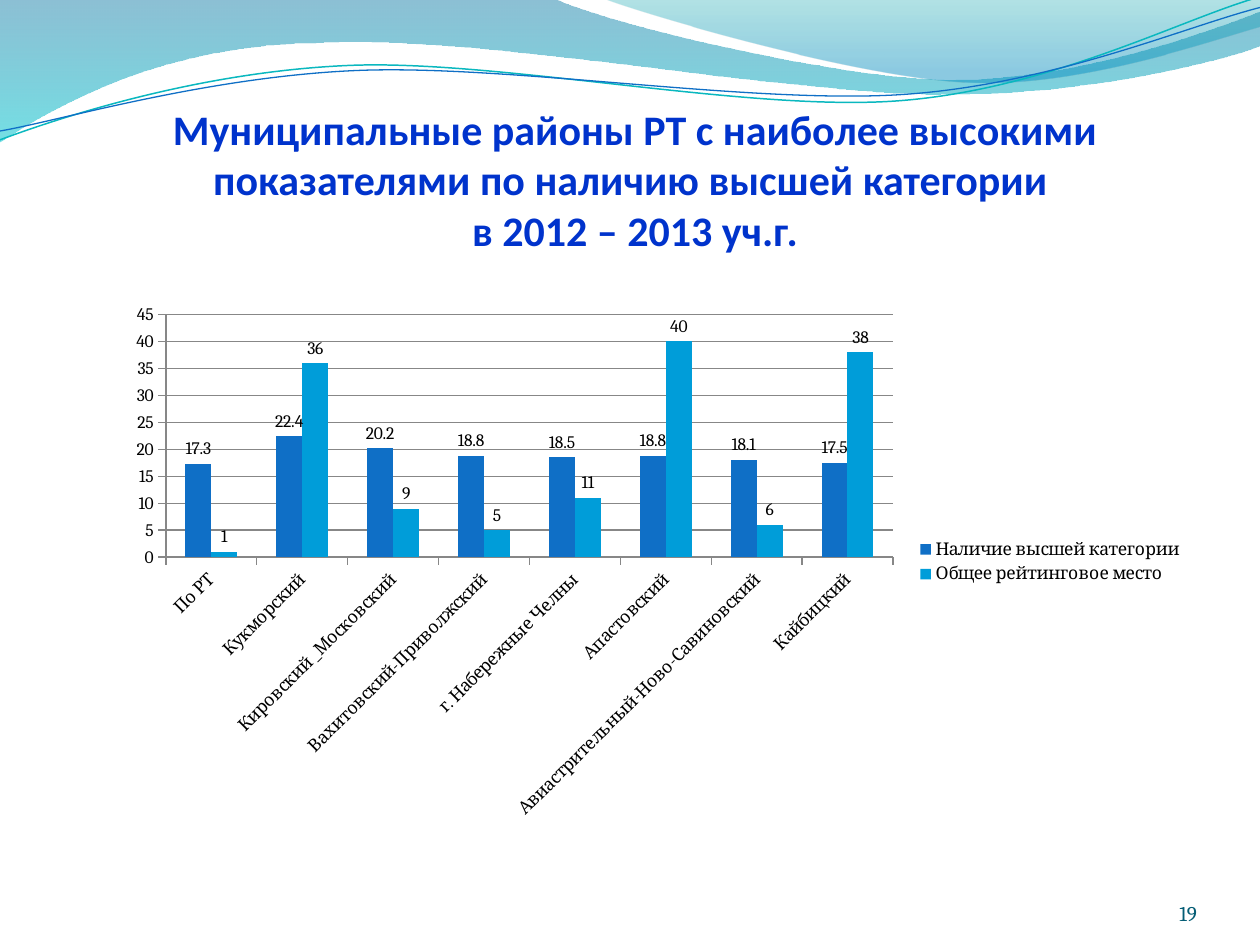
from math import cos, radians, sin
from pptx import Presentation
from pptx.chart.data import CategoryChartData
from pptx.dml.color import RGBColor
from pptx.enum.chart import XL_CHART_TYPE, XL_LABEL_POSITION, XL_LEGEND_POSITION, XL_TICK_MARK
from pptx.enum.text import MSO_ANCHOR, PP_ALIGN
from pptx.oxml.ns import qn
from pptx.util import Pt
from lxml.etree import SubElement

TITLE_BLUE = RGBColor(0x00, 0x33, 0xCC)
NUMBER_TEAL = RGBColor(0x04, 0x5D, 0x75)
BLUE = RGBColor(0x0F, 0x6F, 0xC6)
SKY = RGBColor(0x00, 0x9D, 0xD9)
AQUA = RGBColor(0x0A, 0xB8, 0xBF)
DEEP_BLUE = RGBColor(0x00, 0x74, 0xA1)
TURQUOISE = RGBColor(0x00, 0xC6, 0xCF)
SEA = RGBColor(0x00, 0xA1, 0xA9)
AZURE = RGBColor(0x00, 0x8B, 0xBF)
BLACK = RGBColor(0x00, 0x00, 0x00)
TILT = 2.7

prs = Presentation()
prs.slide_width, prs.slide_height = Pt(720), Pt(540)
slide = prs.slides.add_slide(prs.slide_layouts[6])


def add_wave(start, segments, closed):
    outline = [(Pt(x), Pt(y)) for x, y in [start, *(p for segment in segments for p in segment)]]
    builder = slide.shapes.build_freeform(*outline[0])
    builder.add_line_segments(outline[1:], close=closed)
    wave = builder.convert_to_shape()
    wave.shadow.inherit = False
    lines = wave._element.spPr.iter(qn("a:lnTo"))
    for segment, steps in [(s, [next(lines_list) for _ in s]) for lines_list in [iter(list(lines))] for s in segments]:
        if len(segment) == 3:
            curve = SubElement(steps[0].getparent(), qn("a:cubicBezTo"))
            steps[0].addprevious(curve)
            for step in steps:
                curve.append(step[0])
                step.getparent().remove(step)
    return wave


def add_text(left, top, width, height, inset_top, align, lines, font_name, size, color, bold):
    frame = slide.shapes.add_textbox(Pt(left), Pt(top), Pt(width), Pt(height)).text_frame
    frame.word_wrap = True
    frame.vertical_anchor = MSO_ANCHOR.BOTTOM
    frame.margin_left = frame.margin_right = frame.margin_bottom = 0
    frame.margin_top = Pt(inset_top)
    paragraph = frame.paragraphs[0]
    paragraph.alignment = align
    for index, line in enumerate(lines):
        if index:
            paragraph.add_line_break()
        run = paragraph.add_run()
        run.text = line
        run.font.name = font_name
        run.font.size = Pt(size)
        run.font.bold = bold
        run.font.color.rgb = color


bands = [
    ((0, -0.7), [
        [(316.8, -0.7)],
        [(342.7, 12.2), (478.1, 45.4), (545.8, 45.4)],
        [(614.2, 45.4), (689.8, 18.7), (720, 6.5)],
        [(720.7, 25.9)],
        [(707.8, 31.7), (626.4, 54.7), (537.1, 54)],
        [(447.8, 54), (275, 20.2), (185, 24.5)],
        [(92.9, 25.2), (33.1, 59.8), (-0.7, 81.4)],
        [(0, -0.7)],
    ], [(0, DEEP_BLUE, 45), (1, TURQUOISE, 55)]),
    ((344.9, -0.7), [
        [(366.5, 7.9), (491, 44.6), (553.7, 46.8)],
        [(616.3, 49.7), (691.9, 23), (720, 15.1)],
        [(720, 0)],
        [(344.9, -0.7)],
    ], [(0, SEA, 30), (0.8, AZURE, 45)]),
]
for start, segments, stops in bands:
    band = add_wave(start, segments, True)
    band.line.fill.background()
    band.fill.gradient()
    band.fill.gradient_angle = 270
    for stop, (position, color, opacity) in zip(band.fill.gradient_stops, stops):
        stop.position = position
        stop.color.rgb = color
    for color_node, (_, _, opacity) in zip(band._element.spPr.iter(qn("a:srgbClr")), stops):
        SubElement(color_node, qn("a:alpha")).set("val", str(opacity * 1000))

strands = [
    ((359.3, 41.4), (0, 79.9), [
        [(34.6, 67), (113.8, 41), (199.4, 37.4)],
        [(284.4, 33.8), (427, 64.1), (513.4, 57.6)],
        [(599.8, 51.1), (675.4, 10.8), (718.6, -1.4)],
    ], AQUA, 0.85),
    ((359.6, 42.5), (0, 74.9), [
        [(33.8, 69.1), (118.1, 43.9), (203.8, 40.3)],
        [(290.2, 36.7), (429.8, 59.8), (516.2, 54)],
        [(601.9, 48.2), (677.5, 15.1), (720, 4.3)],
    ], BLUE, 0.75),
]
turn_cos, turn_sin = cos(radians(TILT)), sin(radians(TILT))
for (mid_x, mid_y), start, segments, color, width in strands:
    level = [
        [(mid_x + (x - mid_x) * turn_cos - (y - mid_y) * turn_sin,
          mid_y + (x - mid_x) * turn_sin + (y - mid_y) * turn_cos) for x, y in segment]
        for segment in [[start], *segments]
    ]
    strand = add_wave(level[0][0], level[1:], False)
    strand.rotation = 360 - TILT
    strand.fill.background()
    strand.line.color.rgb = color
    strand.line.width = Pt(width)

title_lines = [
    "Муниципальные районы РТ с наиболее высокими показателями по наличию высшей категории ",
    "в 2012 – 2013 уч.г.",
]
add_text(36, 55.4, 653.8, 90, 3.6, PP_ALIGN.CENTER, title_lines, "Calibri", 24, TITLE_BLUE, True)

ratings = CategoryChartData()
ratings.categories = [
    "По РТ", "Кукморский", "Кировский _Московский", "Вахитовский-Приволжский",
    "г. Набережные Челны", "Апастовский", "Авиастрительный-Ново-Савиновский", "Кайбицкий",
]
ratings.add_series("Наличие высшей категории", [17.3, 22.4, 20.2, 18.8, 18.5, 18.8, 18.1, 17.5])
ratings.add_series("Общее рейтинговое место", [1, 36, 9, 5, 11, 40, 6, 38])
chart = slide.shapes.add_chart(
    XL_CHART_TYPE.COLUMN_CLUSTERED, Pt(65.5), Pt(168), Pt(617.8), Pt(306), ratings
).chart
chart.has_title = False
chart.font.name = "Cambria"
chart.font.size = Pt(10)
chart.font.color.rgb = BLACK
chart.has_legend = True
chart.legend.position = XL_LEGEND_POSITION.RIGHT
chart.legend.include_in_layout = False

plot = chart.plots[0]
plot.gap_width = 150
plot.vary_by_categories = False
for series, color in zip(plot.series, (BLUE, SKY)):
    series.format.fill.solid()
    series.format.fill.fore_color.rgb = color
    labels = series.data_labels
    labels.show_value = True
    labels.position = XL_LABEL_POSITION.OUTSIDE_END

for axis in (chart.category_axis, chart.value_axis):
    axis.major_tick_mark = XL_TICK_MARK.OUTSIDE
    axis.minor_tick_mark = XL_TICK_MARK.NONE
chart.value_axis.has_major_gridlines = True

add_text(624.2, 500.4, 59.8, 28.8, 0, PP_ALIGN.RIGHT, ["19"], "Cambria", 12, NUMBER_TEAL, False)

prs.save("out.pptx")
